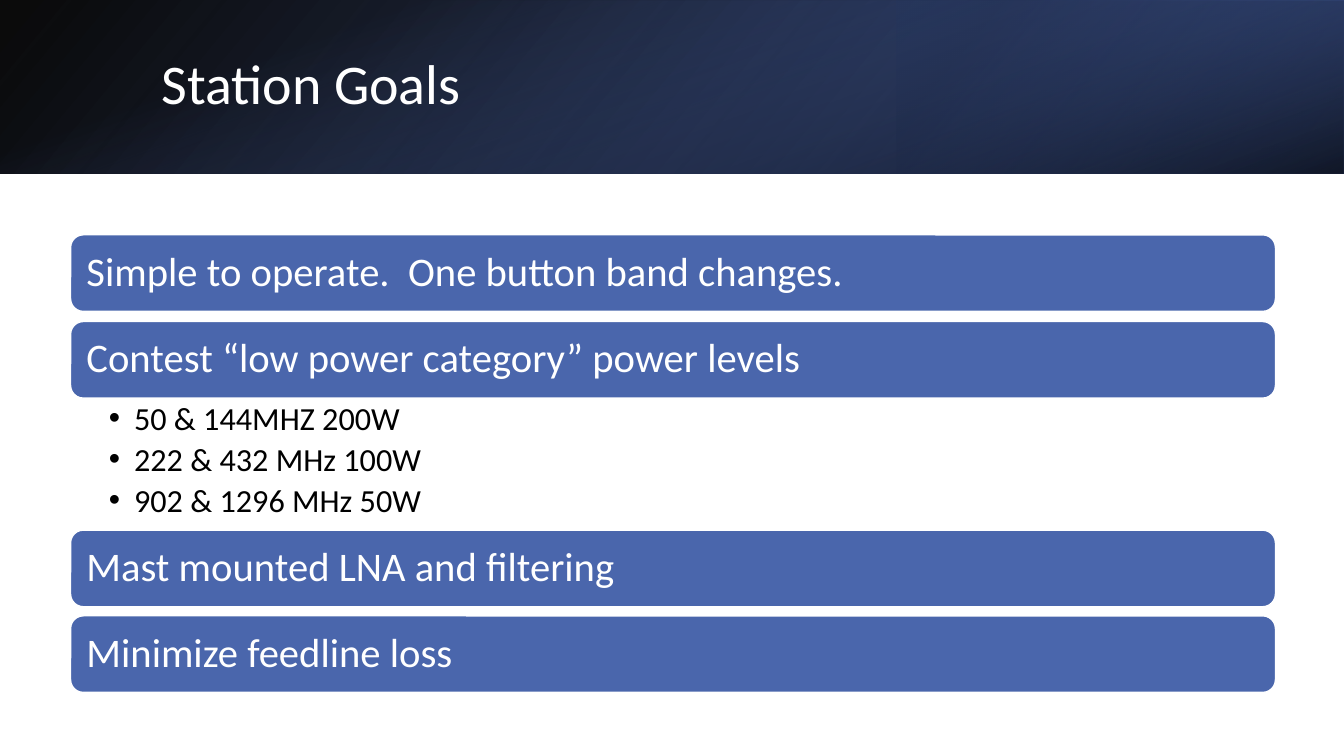
from dataclasses import dataclass

from lxml.etree import SubElement
from pptx import Presentation
from pptx.dml.color import RGBColor
from pptx.enum.shapes import MSO_SHAPE
from pptx.enum.text import MSO_ANCHOR, MSO_AUTO_SIZE, PP_ALIGN
from pptx.oxml import parse_xml
from pptx.oxml.ns import nsdecls, qn
from pptx.shapes.autoshape import Shape
from pptx.slide import Slide
from pptx.text.text import _Paragraph as Para
from pptx.util import Inches, Pt

HUES = {"white": "FFFFFF", "black": "000000", "blue": "4A66AC",
        "dusk": "384C81", "navy": "253356"}
FONT = "Calibri"
LEFT, WIDE, HIGH = 0.7, 11.95, 0.76


@dataclass
class Stop:
    place: int
    hue: str
    alpha: int


@dataclass
class Band:
    box: tuple[float, float, float, float]
    turn: int
    flip: bool
    angle: int
    stops: list[Stop]


@dataclass
class Goal:
    top: float
    text: str


BANDS = [
    Band((0, 0, 13.33, 1.72), 0, True, 140,
         [Stop(0, "black", 96), Stop(100, "dusk", 100)]),
    Band((8.89, 0, 4.44, 1.72), 180, True, 320,
         [Stop(19, "navy", 68), Stop(100, "blue", 79)]),
    Band((5.8, -5.8, 1.72, 13.33), 90, False, 340,
         [Stop(23, "blue", 0), Stop(99, "black", 74)]),
]
GOALS = [
    Goal(2.33, "Simple to operate.  One button band changes."),
    Goal(3.19, "Contest “low power category” power levels"),
    Goal(5.26, "Mast mounted LNA and filtering"),
    Goal(6.11, "Minimize feedline loss"),
]
LEVELS = ["50 & 144MHZ 200W", "222 & 432 MHz 100W", "902 & 1296 MHz 50W"]


def color(name: str) -> RGBColor:
    return RGBColor.from_string(HUES[name])


def place(shape: Shape, box: tuple[float, float, float, float]) -> None:
    shape.left, shape.top, shape.width, shape.height = map(Inches, box)


def style(para: Para, size: int, hue: str) -> None:
    para.alignment = PP_ALIGN.LEFT
    para.line_spacing = 0.9
    para.font.name = FONT
    para.font.size = Pt(size)
    para.font.color.rgb = color(hue)


def draw_band(slide: Slide, band: Band) -> None:
    shape = slide.shapes.add_shape(MSO_SHAPE.RECTANGLE, *map(Inches, band.box))
    shape.shadow.inherit = False
    shape.line.fill.background()
    shape.rotation = band.turn
    props = shape._element.spPr
    if band.flip:
        props.find(qn("a:xfrm")).set("flipH", "1")
    stops = "".join(
        f'<a:gs pos="{stop.place * 1000}"><a:srgbClr val="{HUES[stop.hue]}">'
        f'<a:alpha val="{stop.alpha * 1000}"/></a:srgbClr></a:gs>'
        for stop in band.stops)
    props.insert(2, parse_xml(
        f'<a:gradFill {nsdecls("a")} rotWithShape="1"><a:gsLst>{stops}</a:gsLst>'
        f'<a:lin ang="{band.angle * 60000}" scaled="0"/></a:gradFill>'))


def draw_goal(slide: Slide, goal: Goal) -> None:
    box = (LEFT, goal.top, WIDE, HIGH)
    shape = slide.shapes.add_shape(MSO_SHAPE.ROUNDED_RECTANGLE, *map(Inches, box))
    shape.shadow.inherit = False
    shape.fill.solid()
    shape.fill.fore_color.rgb = color("blue")
    shape.line.color.rgb = color("white")
    shape.line.width = Pt(1)
    frame = shape.text_frame
    frame.word_wrap = True
    frame.vertical_anchor = MSO_ANCHOR.MIDDLE
    frame.margin_left = frame.margin_right = Inches(0.12)
    frame.text = goal.text
    style(frame.paragraphs[0], 29, "white")


def fill_title(slide: Slide) -> None:
    title = slide.shapes.title
    place(title, (1.5, 0.38, 10.98, 0.96))
    frame = title.text_frame
    frame.text = "Station Goals"
    frame.auto_size = MSO_AUTO_SIZE.NONE
    frame.vertical_anchor = MSO_ANCHOR.MIDDLE
    style(frame.paragraphs[0], 40, "white")
    slide.shapes._spTree.append(title._element)


def fill_list(slide: Slide) -> None:
    body = slide.placeholders[1]
    place(body, (LEFT, 3.95, WIDE, 1.31))
    frame = body.text_frame
    frame.text = "\n".join(LEVELS)
    frame.auto_size = MSO_AUTO_SIZE.NONE
    frame.vertical_anchor = MSO_ANCHOR.TOP
    frame.margin_left, frame.margin_right = Inches(0.38), Inches(0.23)
    frame.margin_top = frame.margin_bottom = Inches(0.04)
    for para in frame.paragraphs:
        para.level = 1
        props = para._p.get_or_add_pPr()
        props.set("marL", str(Inches(0.25)))
        props.set("indent", str(Inches(-0.25)))
        SubElement(props, qn("a:buChar")).set("char", "•")
        para.space_before = Pt(0)
        para.space_after = Pt(4.5)
        style(para, 23, "black")


def main() -> None:
    deck = Presentation()
    deck.slide_width, deck.slide_height = Inches(13.33), Inches(7.5)
    slide = deck.slides.add_slide(deck.slide_layouts[1])
    for band in BANDS:
        draw_band(slide, band)
    fill_title(slide)
    for goal in GOALS:
        draw_goal(slide, goal)
    fill_list(slide)
    deck.save("out.pptx")


if __name__ == "__main__":
    main()
